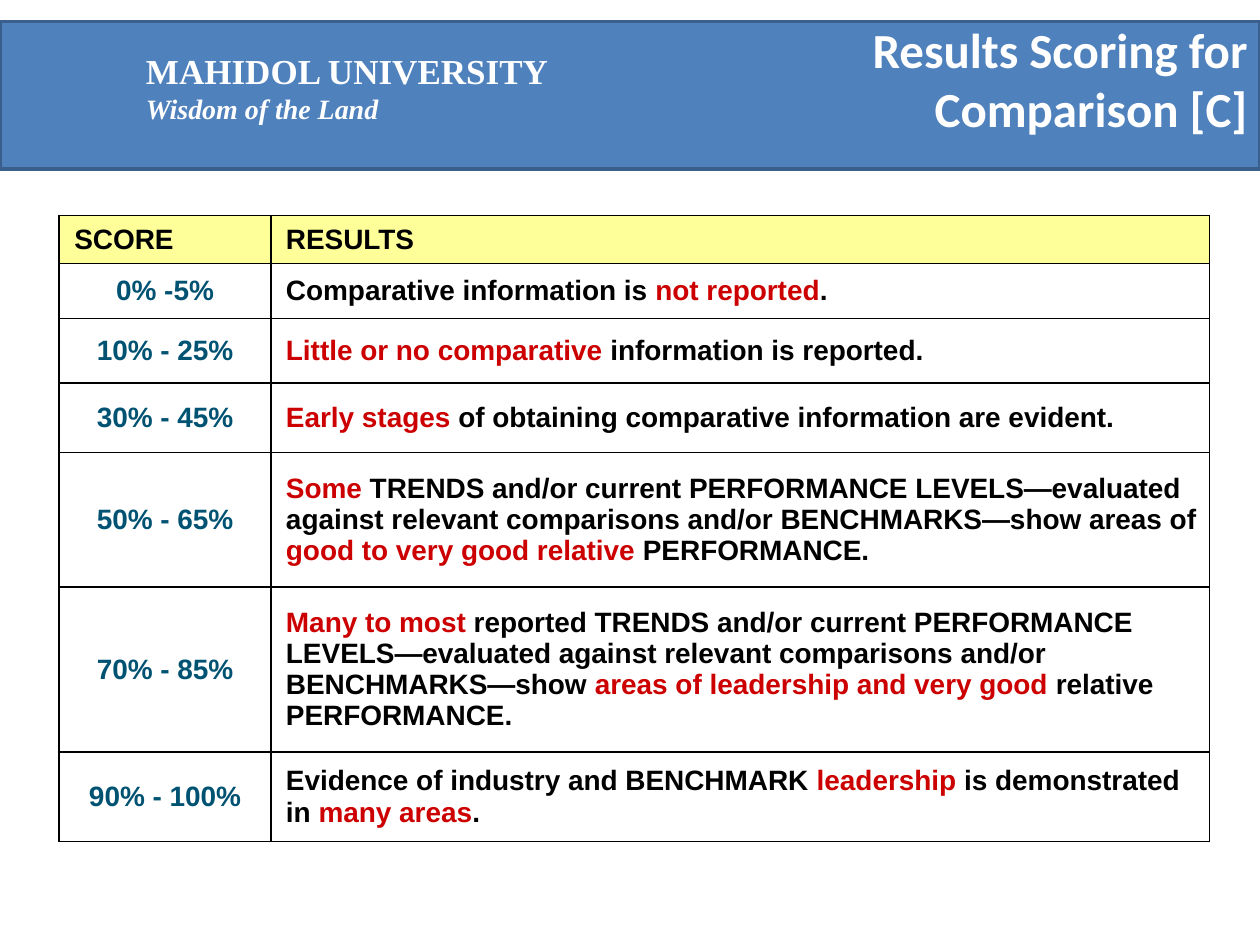
from lxml import etree
from pptx import Presentation
from pptx.dml.color import RGBColor
from pptx.enum.shapes import MSO_SHAPE
from pptx.enum.text import MSO_ANCHOR, MSO_AUTO_SIZE, PP_ALIGN
from pptx.oxml.ns import qn
from pptx.util import Inches, Pt

RECT = MSO_SHAPE.RECTANGLE
MIDDLE = MSO_ANCHOR.MIDDLE
NO_FIT = MSO_AUTO_SIZE.NONE
LEFT, CENTER, RIGHT = PP_ALIGN.LEFT, PP_ALIGN.CENTER, PP_ALIGN.RIGHT

BLUE = RGBColor(0x4F, 0x81, 0xBD)
EDGE = RGBColor(0x3A, 0x5F, 0x8C)
WHITE = RGBColor(0xFF, 0xFF, 0xFF)
BLACK = RGBColor(0, 0, 0)
YELLOW = RGBColor(0xFF, 0xFF, 0x99)
TEAL = RGBColor(0x00, 0x52, 0x72)
RED = RGBColor(0xCC, 0, 0)

NAME = {"name": "Times New Roman", "size": Pt(20), "bold": True}
MOTTO = {**NAME, "size": Pt(16), "italic": True}
TITLE = {"name": "Calibri", "size": Pt(28), "bold": True}
CELL = {"name": "Arial", "size": Pt(16), "bold": True}

COLS = [1.68, 7.45]
# Row height, score and result; asterisks enclose the red words
ROWS = [
    (0.38, "SCORE", "RESULTS"),
    (0.44, "0% -5%", "Comparative information is *not reported*."),
    (0.51, "10% - 25%", "*Little or no comparative* information is reported."),
    (0.55, "30% - 45%", "*Early stages* of obtaining comparative information are evident."),
    (1.07, "50% - 65%", "*Some* TRENDS and/or current PERFORMANCE LEVELS—evaluated "
     "against relevant comparisons and/or BENCHMARKS—show areas of "
     "*good to very good relative* PERFORMANCE."),
    (1.31, "70% - 85%", "*Many to most* reported TRENDS and/or current PERFORMANCE "
     "LEVELS—evaluated against relevant comparisons and/or BENCHMARKS—show "
     "*areas of leadership and very good* relative PERFORMANCE."),
    (0.71, "90% - 100%", "Evidence of industry and BENCHMARK *leadership* is "
     "demonstrated in *many areas*."),
]


def apply(obj, values):
    for key, value in values.items():
        setattr(obj, key, value)


def box(*sides):
    return [Inches(side) for side in sides]


def write(para, text, look, color, align=LEFT):
    para.alignment = align
    for i, part in enumerate(text.split("*")):
        if part:
            run = para.add_run()
            run.text = part
            apply(run.font, look)
            run.font.color.rgb = RED if i % 2 else color


def add_band(slide):
    band = slide.shapes.add_shape(RECT, *box(0, 0.17, 10, 1.17))
    band.shadow.inherit = False
    band.fill.solid()
    band.fill.fore_color.rgb = BLUE
    band.line.color.rgb = EDGE
    band.line.width = Pt(2)


def add_brand(slide):
    frame = slide.shapes.add_textbox(*box(1.06, 0.34, 3.41, 0.7)).text_frame
    frame.word_wrap = False
    write(frame.paragraphs[0], "MAHIDOL UNIVERSITY", NAME, WHITE)
    write(frame.add_paragraph(), "Wisdom of the Land", MOTTO, WHITE)


def set_title(slide, text):
    title = slide.shapes.title
    apply(title, dict(zip(("left", "top", "width", "height"), box(5.08, 0, 4.92, 1.25))))
    frame = title.text_frame
    apply(frame, {"auto_size": NO_FIT, "word_wrap": True, "vertical_anchor": MIDDLE})
    write(frame.paragraphs[0], text, TITLE, WHITE, RIGHT)


def add_edges(cell):
    props = cell._tc.get_or_add_tcPr()
    for side in ("a:lnL", "a:lnR", "a:lnT", "a:lnB"):
        line = etree.SubElement(props, qn(side), w=str(Pt(1)))
        fill = etree.SubElement(line, qn("a:solidFill"))
        etree.SubElement(fill, qn("a:srgbClr"), val=str(BLACK))


def fill_cell(cell, text, color, align, head):
    inset = 0 if align == CENTER else Inches(0.12)
    apply(cell, {"margin_left": inset, "margin_right": 0, "margin_top": 0,
                 "margin_bottom": 0, "vertical_anchor": MIDDLE})
    add_edges(cell)
    if head:
        cell.fill.solid()
        cell.fill.fore_color.rgb = YELLOW
    else:
        cell.fill.background()
    write(cell.text_frame.paragraphs[0], text, CELL, color, align)


def add_scores(slide):
    high = sum(row[0] for row in ROWS)
    table = slide.shapes.add_table(
        len(ROWS), len(COLS), *box(0.47, 1.71, sum(COLS), high)).table
    apply(table, {"first_row": False, "horz_banding": False})
    for col, width in zip(table.columns, COLS):
        col.width = Inches(width)
    for i, (height, score, result) in enumerate(ROWS):
        head = i == 0
        table.rows[i].height = Inches(height)
        fill_cell(table.cell(i, 0), score, BLACK if head else TEAL,
                  LEFT if head else CENTER, head)
        fill_cell(table.cell(i, 1), result, BLACK, LEFT, head)


def main():
    deck = Presentation()
    apply(deck, {"slide_width": Inches(10), "slide_height": Inches(7.5)})
    slide = deck.slides.add_slide(deck.slide_layouts[5])
    # Header band; the title moves in front of it
    add_band(slide)
    add_brand(slide)
    set_title(slide, "Results Scoring for Comparison [C]")
    slide.shapes._spTree.append(slide.shapes.title._element)
    # Scoring table
    add_scores(slide)
    deck.save("out.pptx")


if __name__ == "__main__":
    main()
